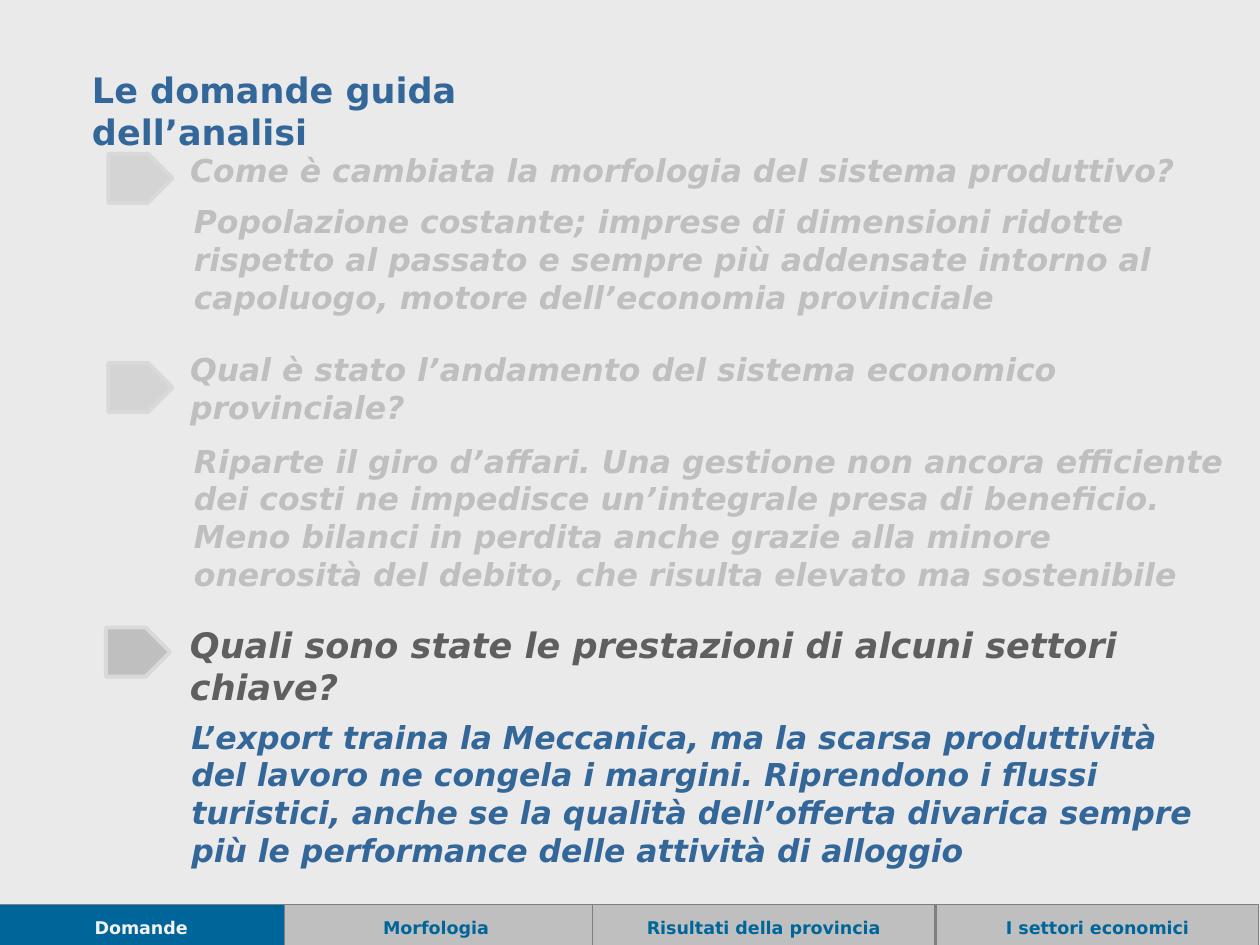
from lxml.etree import SubElement
from pptx import Presentation
from pptx.dml.color import RGBColor
from pptx.enum.shapes import MSO_SHAPE as Preset
from pptx.enum.text import MSO_ANCHOR as Anchor, MSO_AUTO_SIZE as AutoSize, PP_ALIGN as Align
from pptx.oxml.ns import qn
from pptx.util import Inches, Pt

FONT = "DejaVu Sans"
BACKGROUND = "EAEAEA"
BLUE = "336699"
TEAL = "006699"
GRAY = "BFBFBF"
DARK = "5F5F5F"
PALE = "D9D9D9"
EDGE = "808080"
WHITE = "F2F2F2"


def color(value):
    return RGBColor.from_string(value)


class SlideBuilder:
    def __init__(self, presentation):
        self.slide = presentation.slides.add_slide(presentation.slide_layouts[5])
        fill = self.slide.background.fill
        fill.solid()
        fill.fore_color.rgb = color(BACKGROUND)

    def set_text(self, shape, text, size, text_color, italic=False, align=Align.LEFT,
                 anchor=Anchor.TOP, wrap=True):
        frame = shape.text_frame
        frame.text = text
        frame.auto_size = AutoSize.NONE
        frame.word_wrap = wrap
        frame.vertical_anchor = anchor
        paragraph = frame.paragraphs[0]
        paragraph.alignment = align
        font = paragraph.font
        font.name = FONT
        font.size = Pt(size)
        font.bold = True
        font.italic = italic
        font.color.rgb = color(text_color)

    def title(self, box, text):
        shape = self.slide.shapes.title
        shape.left, shape.top, shape.width, shape.height = map(Inches, box)
        self.set_text(shape, text, 20, BLUE)

    def text(self, box, text, size, text_color, anchor=Anchor.TOP):
        shape = self.slide.shapes.add_textbox(*map(Inches, box))
        self.set_text(shape, text, size, text_color, italic=True, anchor=anchor)

    def shape(self, preset, box, fill, line, width):
        shape = self.slide.shapes.add_shape(preset, *map(Inches, box))
        shape.shadow.inherit = False
        shape.fill.solid()
        shape.fill.fore_color.rgb = color(fill)
        shape.line.color.rgb = color(line)
        shape.line.width = Pt(width)
        return shape

    def marker(self, left, top, opacity):
        shape = self.shape(Preset.PENTAGON, (left, top, 0.51, 0.39), GRAY, PALE, 2.25)
        if opacity < 100:
            fill = shape.element.spPr.find(qn("a:solidFill"))
            SubElement(fill[0], qn("a:alpha"), val=str(opacity * 1000))

    def tab(self, left, width, text, fill, text_color):
        shape = self.shape(Preset.RECTANGLE, (left, 7.18, width, 0.36), fill, EDGE, 0.75)
        self.set_text(shape, text, 10, text_color, align=Align.CENTER,
                      anchor=Anchor.MIDDLE, wrap=False)


QUESTIONS = [
    ((1.41, 1.15, 8.25, 0.4), "Come è cambiata la morfologia del sistema produttivo?", 18, GRAY,
     (1.44, 1.55, 8.27, 1.01),
     "Popolazione costante; imprese di dimensioni ridotte rispetto al passato e sempre più "
     "addensate intorno al capoluogo, motore dell’economia provinciale", GRAY,
     (0.86, 1.22, 50)),
    ((1.41, 2.73, 8.58, 0.71), "Qual è stato l’andamento del sistema economico provinciale?", 18, GRAY,
     (1.44, 3.45, 8.42, 1.31),
     "Riparte il giro d’affari. Una gestione non ancora efficiente dei costi ne impedisce "
     "un’integrale presa di beneficio. Meno bilanci in perdita anche grazie alla minore "
     "onerosità del debito, che risulta elevato ma sostenibile", GRAY,
     (0.86, 2.88, 50)),
    ((1.41, 4.9, 8.2, 0.77), "Quali sono state le prestazioni di alcuni settori chiave?", 20, DARK,
     (1.42, 5.64, 8.27, 1.31),
     "L’export traina la Meccanica, ma la scarsa produttività del lavoro ne congela i margini. "
     "Riprendono i flussi turistici, anche se la qualità dell’offerta divarica sempre più le "
     "performance delle attività di alloggio", BLUE,
     (0.84, 4.98, 100)),
]

TABS = [
    (2.22, 2.48, "Morfologia", GRAY, TEAL),
    (4.7, 2.72, "Risultati della provincia", GRAY, TEAL),
    (7.43, 2.56, "I settori economici", GRAY, TEAL),
    (-0.02, 2.28, "Domande", TEAL, WHITE),
]


def main():
    presentation = Presentation()
    presentation.slide_width = Inches(10)
    presentation.slide_height = Inches(7.5)
    builder = SlideBuilder(presentation)
    builder.title((0.63, 0.49, 4.8, 0.44), "Le domande guida dell’analisi")
    for question_box, question, size, question_color, answer_box, answer, answer_color, marker in QUESTIONS:
        builder.text(question_box, question, size, question_color)
        builder.marker(*marker)
        builder.text(answer_box, answer, 18, answer_color, Anchor.MIDDLE)
    for tab in TABS:
        builder.tab(*tab)
    presentation.save("out.pptx")


if __name__ == "__main__":
    main()
